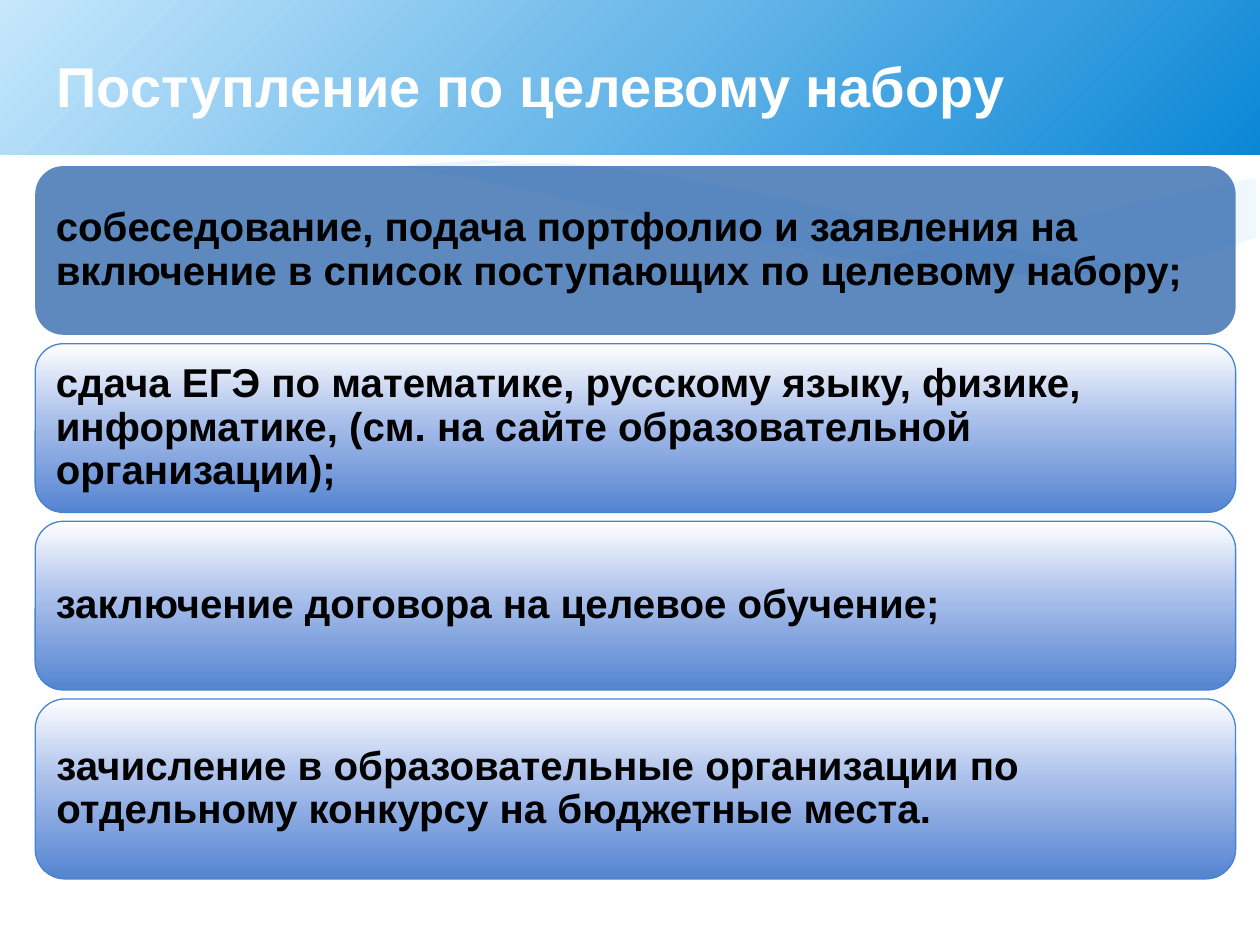
from dataclasses import dataclass

from pptx import Presentation
from pptx.dml.color import RGBColor as RGB
from pptx.enum.shapes import MSO_SHAPE as Shape
from pptx.enum.text import MSO_ANCHOR as Anchor, PP_ALIGN as Align
from pptx.oxml import parse_xml
from pptx.oxml.ns import nsdecls, qn
from pptx.util import Cm, Pt


@dataclass(frozen=True)
class Theme:
    font: str = "Arial"
    title_size: int = 32
    step_size: int = 23
    white: str = "FFFFFF"
    text: str = "000000"
    wave: str = "C6E7FC"
    first_step: str = "2862AA"
    step_line: str = "4584D3"
    header_stops: tuple = ((0, "0B87D6"), (50, "69B7E9"), (100, "C6E7FC"))
    step_stops: tuple = ((0, "FFFFFF"), (44, "ABC0EB"), (100, "5484D1"))


THEME = Theme()
TITLE = "Поступление по целевому набору"
STEPS = [
    "собеседование, подача портфолио и заявления на включение в список "
    "поступающих по целевому набору;",
    "сдача ЕГЭ по математике, русскому языку, физике, информатике, "
    "(см. на сайте образовательной организации);",
    "заключение договора на целевое обучение;",
    "зачисление в образовательные организации по отдельному конкурсу "
    "на бюджетные места.",
]

# Wave outlines in cm, measured from the corner of the wave band
RIGHT_WAVE = [
    (25.32, 0.41), (24.28, 0.61), (22.4, 1.02), (20.32, 1.5), (18.47, 1.88),
    (17.32, 2.08), (18.44, 2.24), (19.76, 2.36), (21.21, 2.39), (22.45, 2.34),
    (23.52, 2.18), (24.46, 1.93), (25.32, 1.63)]
LONG_WAVE = [
    (23.22, 2.26), (21.79, 2.08), (20.22, 1.8), (18.47, 1.45), (16.51, 0.97),
    (14.99, 0.64), (13.59, 0.38), (12.32, 0.2), (11.2, 0.1), (9.7, 0.05),
    (8.48, 0.13), (7.8, 0.2), (9.22, 0.41), (10.8, 0.71), (11.94, 0.97),
    (14, 1.45), (15.8, 1.83), (17.42, 2.11), (18.87, 2.29), (20.47, 2.41),
    (21.82, 2.41)]
FALLING_LINE = [
    (8.38, 0.3), (9.25, 0.18), (10.36, 0.1), (11.96, 0.1), (13.49, 0.23),
    (15.32, 0.43), (17.42, 0.76), (19, 1.09), (20.73, 1.47), (23.57, 2.24)]
RISING_LINE = [
    (16.1, 1.85), (17.6, 1.47), (19.53, 1.02), (21.77, 0.53), (23.27, 0.25),
    (24.33, 0.13), (25.3, 0.05)]
WHITE_WAVE = [
    (25.35, 1.6), (24.41, 1.93), (23.37, 2.18), (22.12, 2.34), (20.68, 2.36),
    (18.97, 2.26), (16.97, 2.01), (15.24, 1.68), (13.31, 1.27), (11.89, 0.94),
    (9.8, 0.48), (7.95, 0.18), (6.38, 0.05), (5, 0), (3.56, 0.1), (2.24, 0.36),
    (1.12, 0.76), (1.12, 3.71), (25.35, 3.71)]


def fill_solid(shape, color, opacity=100):
    shape.fill.solid()
    shape.fill.fore_color.rgb = RGB.from_string(color)
    if opacity < 100:
        tint = shape._element.spPr.find(qn("a:solidFill"))[0]
        tint.append(parse_xml(f'<a:alpha {nsdecls("a")} val="{opacity * 1000}"/>'))


def fill_gradient(shape, stops, direction):
    shape.fill.background()
    gradient_stops = "".join(
        f'<a:gs pos="{pos * 1000}"><a:srgbClr val="{color}"/></a:gs>'
        for pos, color in stops)
    spPr = shape._element.spPr
    spPr.replace(spPr.find(qn("a:noFill")), parse_xml(
        f'<a:gradFill {nsdecls("a")} rotWithShape="1">'
        f"<a:gsLst>{gradient_stops}</a:gsLst>{direction}</a:gradFill>"))


def set_outline(shape, color=None, width=0):
    shape.shadow.inherit = False
    if color is None:
        shape.line.fill.background()
    else:
        shape.line.color.rgb = RGB.from_string(color)
        shape.line.width = Pt(width)


def write(shape, text, *, size, color, spacing=None, inset=None):
    frame = shape.text_frame
    frame.word_wrap = True
    frame.vertical_anchor = Anchor.MIDDLE
    if inset is not None:
        frame.margin_left = frame.margin_right = Cm(inset)
        frame.margin_top = frame.margin_bottom = Cm(inset)
    paragraph = frame.paragraphs[0]
    paragraph.alignment = Align.LEFT
    if spacing is not None:
        paragraph.line_spacing = spacing
    run = paragraph.add_run()
    run.text = text
    run.font.name = THEME.font
    run.font.size = Pt(size)
    run.font.bold = True
    run.font.color.rgb = RGB.from_string(color)


def add_waves(slide, left, top):
    def outline(points, close):
        corners = [(Cm(left + x), Cm(top + y)) for x, y in points]
        builder = slide.shapes.build_freeform(*corners[0])
        builder.add_line_segments(corners[1:], close=close)
        return builder.convert_to_shape()

    def add_wave(points, color, opacity=100):
        wave = outline(points, True)
        fill_solid(wave, color, opacity)
        set_outline(wave)

    add_wave(RIGHT_WAVE, THEME.wave, 29)
    add_wave(LONG_WAVE, THEME.wave, 40)
    for points in (FALLING_LINE, RISING_LINE):
        hairline = outline(points, False)
        hairline.fill.background()
        set_outline(hairline, THEME.white)
    add_wave(WHITE_WAVE, THEME.white)


def add_header(slide, left, top, width, height):
    band = slide.shapes.add_shape(
        Shape.RECTANGLE, Cm(left), Cm(top), Cm(width), Cm(height))
    fill_gradient(band, THEME.header_stops,
                  '<a:path path="circle"><a:fillToRect l="100000" t="100000"/></a:path>')
    set_outline(band)
    title = slide.shapes.add_textbox(
        Cm(left + 0.89), Cm(top + 0.53), Cm(20.9), Cm(2.39))
    write(title, TITLE, size=THEME.title_size, color=THEME.white)


def add_steps(slide, left, top, width, height, gap=0.18, last_extra=0.23):
    # Equal cards; the last one is slightly taller
    card_height = (height - last_extra - gap * (len(STEPS) - 1)) / len(STEPS)
    for index, step in enumerate(STEPS):
        extra = last_extra if index == len(STEPS) - 1 else 0
        card = slide.shapes.add_shape(
            Shape.ROUNDED_RECTANGLE, Cm(left), Cm(top + index * (card_height + gap)),
            Cm(width), Cm(card_height + extra))
        if index == 0:
            fill_solid(card, THEME.first_step, 75)
            set_outline(card)
        else:
            fill_gradient(card, THEME.step_stops, '<a:lin ang="5400000" scaled="0"/>')
            set_outline(card, THEME.step_line, 0.75)
        write(card, step, size=THEME.step_size, color=THEME.text,
              spacing=0.9, inset=0.25)


def main():
    prs = Presentation()
    prs.slide_width, prs.slide_height = Cm(25.4), Cm(19.05)
    slide = prs.slides.add_slide(prs.slide_layouts[6])
    add_waves(slide, 0, 3.18)
    add_header(slide, 0, 0, 25.4, 3.12)
    add_steps(slide, 0.71, 3.35, 24.2, 14.37)
    prs.save("out.pptx")


if __name__ == "__main__":
    main()
